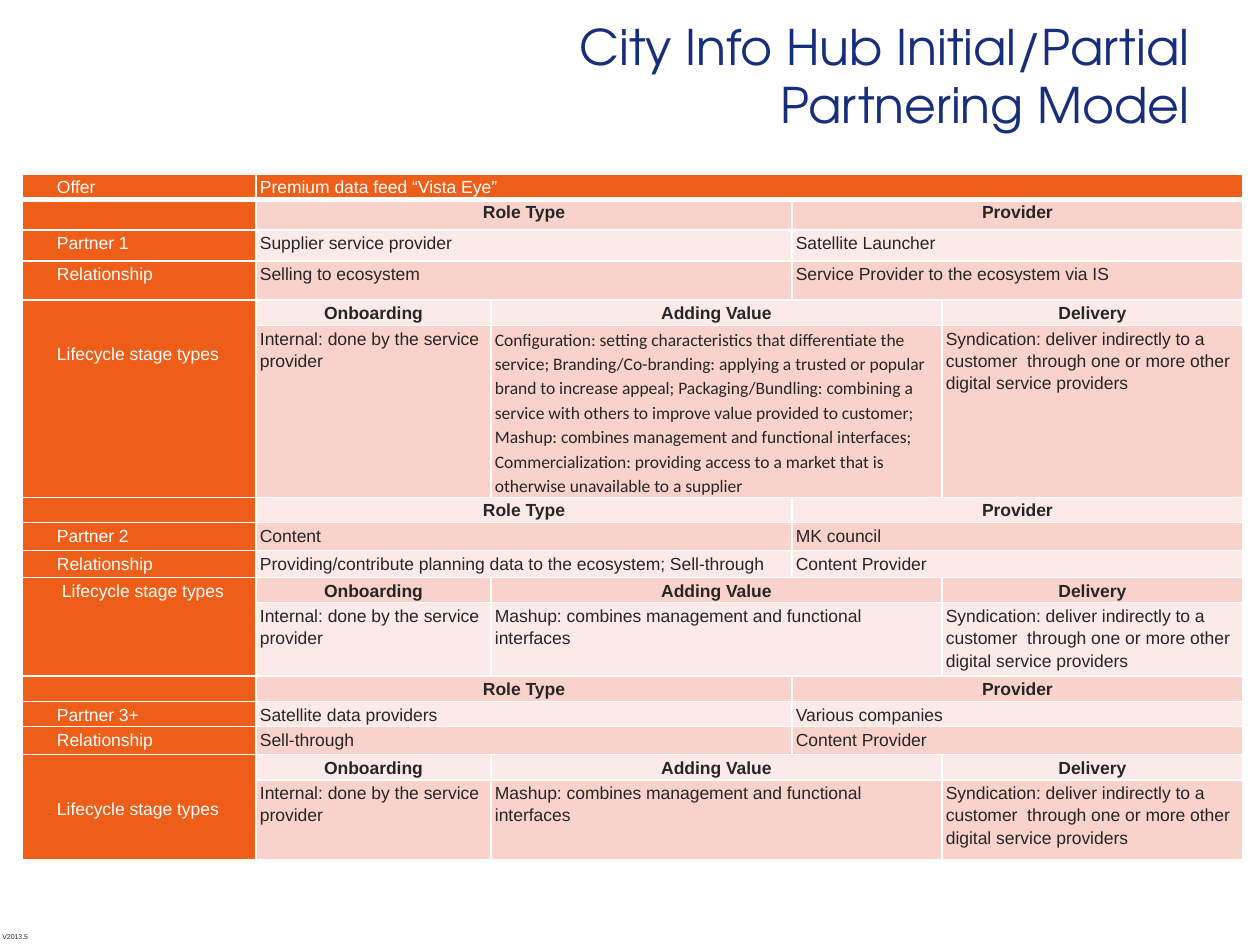
import pptx
import pptx.dml.color
import pptx.enum.text
import pptx.oxml
import pptx.oxml.ns
import pptx.util

RGBColor = pptx.dml.color.RGBColor
ALIGN = pptx.enum.text.PP_ALIGN
ANCHOR = pptx.enum.text.MSO_ANCHOR

NAVY = RGBColor(0x17, 0x2E, 0x7D)
ORANGE = RGBColor(0xEF, 0x5E, 0x18)
PINK = RGBColor(0xF9, 0xD2, 0xCC)
PALE = RGBColor(0xFC, 0xEA, 0xE8)
DARK = RGBColor(0x26, 0x26, 0x26)
WHITE = RGBColor(0xFF, 0xFF, 0xFF)

TITLE = "City Info Hub Initial/Partial Partnering Model"
VERSION = "V2013.5"
OFFER = "Premium data feed “Vista Eye”"
ROLE_HEADS = ("Role Type", "Provider")
STAGE_HEADS = ("Onboarding", "Adding Value", "Delivery")
INTERNAL = "Internal: done by the service provider"
MASHUP = "Mashup: combines management and functional interfaces"
SYNDICATION = (
    "Syndication: deliver indirectly to a customer  through one or more "
    "other digital service providers"
)
CONFIGURATION = (
    "Configuration: setting characteristics that differentiate the service; "
    "Branding/Co-branding: applying a trusted or popular brand to increase appeal; "
    "Packaging/Bundling: combining a service with others to improve value provided "
    "to customer; Mashup: combines management and functional interfaces; "
    "Commercialization: providing access to a market that is otherwise unavailable "
    "to a supplier"
)
PARTNERS = [
    {
        "name": "Partner 1",
        "roles": ("Supplier service provider", "Satellite Launcher"),
        "relations": ("Selling to ecosystem", "Service Provider to the ecosystem via IS"),
        "value": CONFIGURATION, "value_font": "Calibri",
        "label_left": 35, "label_top": 42, "heights": (31, 31, 39, 23, 172),
    },
    {
        "name": "Partner 2",
        "roles": ("Content", "MK council"),
        "relations": (
            "Providing/contribute planning data to the ecosystem; Sell-through",
            "Content Provider",
        ),
        "value": MASHUP, "value_font": "Arial",
        "label_left": 40, "label_top": 1, "heights": (24, 28, 27, 24, 68),
    },
    {
        "name": "Partner 3+",
        "roles": ("Satellite data providers", "Various companies"),
        "relations": ("Sell-through", "Content Provider"),
        "value": MASHUP, "value_font": "Arial",
        "label_left": 35, "label_top": 42, "heights": (24, 25, 28, 23, 80),
    },
]
OFFER_HEIGHT = 24
COLUMN_WIDTHS = (234, 235, 301, 150, 301)
TABLE_LEFT, TABLE_TOP = 22, 174
LABEL_LEFT = 35
HALVES = ((1, 2), (3, 4))
STAGES = ((1, 1), (2, 3), (4, 4))


def px(count):
    return pptx.util.Emu(round(count * 914400 / 126))


def style_run(span, size, color, font="Arial", bold=False):
    span.font.size = pptx.util.Pt(size)
    span.font.name = font
    span.font.bold = bold
    span.font.color.rgb = color


def prepare_cell(cell, color, bottom_width):
    cell.margin_left = cell.margin_right = px(4)
    cell.margin_top, cell.margin_bottom = px(1), 0
    cell.vertical_anchor = ANCHOR.TOP
    properties = cell._tc.get_or_add_tcPr()
    for side in "LRTB":
        width = pptx.util.Pt(bottom_width if side == "B" else 1)
        properties.append(pptx.oxml.parse_xml(
            f'<a:ln{side} {pptx.oxml.ns.nsdecls("a")} w="{width}">'
            f'<a:solidFill><a:srgbClr val="{WHITE}"/></a:solidFill></a:ln{side}>'
        ))
    cell.fill.solid()
    cell.fill.fore_color.rgb = color
    para = cell.text_frame.paragraphs[0]
    para.line_spacing = 1.15
    para._p.append(pptx.oxml.parse_xml(
        f'<a:endParaRPr {pptx.oxml.ns.nsdecls("a")} sz="1000"/>'
    ))


def write_cell(cell, text, color=DARK, font="Arial", heading=False):
    para = cell.text_frame.paragraphs[0]
    span = para.add_run()
    span.text = text
    style_run(span, 10, color, font, heading)
    para.alignment = ALIGN.CENTER if heading else ALIGN.LEFT


def write_label(cell, text, left=LABEL_LEFT, top=1):
    write_cell(cell, text, WHITE)
    cell.margin_left, cell.margin_top = px(left), px(top)


def write_row(table, row, spans, texts, heading=False):
    for (first, last), text in zip(spans, texts):
        cell = table.cell(row, first)
        if last > first:
            cell.merge(table.cell(row, last))
        write_cell(cell, text, heading=heading)


def add_partner(table, top, partner):
    write_row(table, top, HALVES, ROLE_HEADS, heading=True)
    write_label(table.cell(top + 1, 0), partner["name"])
    write_row(table, top + 1, HALVES, partner["roles"])
    write_label(table.cell(top + 2, 0), "Relationship")
    write_row(table, top + 2, HALVES, partner["relations"])
    label = table.cell(top + 3, 0)
    label.merge(table.cell(top + 4, 0))
    write_label(label, "Lifecycle stage types", partner["label_left"], partner["label_top"])
    write_row(table, top + 3, STAGES, STAGE_HEADS, heading=True)
    write_row(table, top + 4, STAGES, (INTERNAL, partner["value"], SYNDICATION))
    value_span = table.cell(top + 4, 2).text_frame.paragraphs[0].runs[0]
    value_span.font.name = partner["value_font"]


def add_title(page):
    title = page.shapes.title
    title.left, title.top, title.width, title.height = px(408), px(9), px(794), px(132)
    frame = title.text_frame
    frame.text = TITLE
    frame.word_wrap = True
    frame.auto_size = pptx.enum.text.MSO_AUTO_SIZE.NONE
    frame.vertical_anchor = ANCHOR.MIDDLE
    frame.paragraphs[0].alignment = ALIGN.RIGHT
    style_run(frame.paragraphs[0].runs[0], 28, NAVY, "TeX Gyre Adventor")


def add_version(page):
    box = page.shapes.add_textbox(px(-10), px(926), px(52), px(30))
    box.text_frame.text = VERSION
    box.text_frame.word_wrap = False
    style_run(box.text_frame.paragraphs[0].runs[0], 4, DARK)


def add_partnering_table(page):
    heights = [OFFER_HEIGHT] + [h for partner in PARTNERS for h in partner["heights"]]
    table = page.shapes.add_table(
        len(heights), len(COLUMN_WIDTHS), px(TABLE_LEFT), px(TABLE_TOP),
        px(sum(COLUMN_WIDTHS)), px(sum(heights)),
    ).table
    table.first_row = table.horz_banding = False
    for column, width in zip(table.columns, COLUMN_WIDTHS):
        column.width = px(width)
    for index, height in enumerate(heights):
        table.rows[index].height = px(height)
        for column in range(len(COLUMN_WIDTHS)):
            band = PINK if index % 2 else PALE
            color = ORANGE if index == 0 or column == 0 else band
            prepare_cell(table.cell(index, column), color, 1 if index else 3)
    write_label(table.cell(0, 0), "Offer")
    table.cell(0, 1).merge(table.cell(0, 4))
    write_cell(table.cell(0, 1), OFFER, WHITE)
    top = 1
    for partner in PARTNERS:
        add_partner(table, top, partner)
        top += len(partner["heights"])


def main():
    deck = pptx.Presentation()
    deck.slide_width, deck.slide_height = px(1260), px(945)
    page = deck.slides.add_slide(deck.slide_layouts[5])
    add_version(page)
    add_title(page)
    add_partnering_table(page)
    deck.save("out.pptx")


if __name__ == "__main__":
    main()
